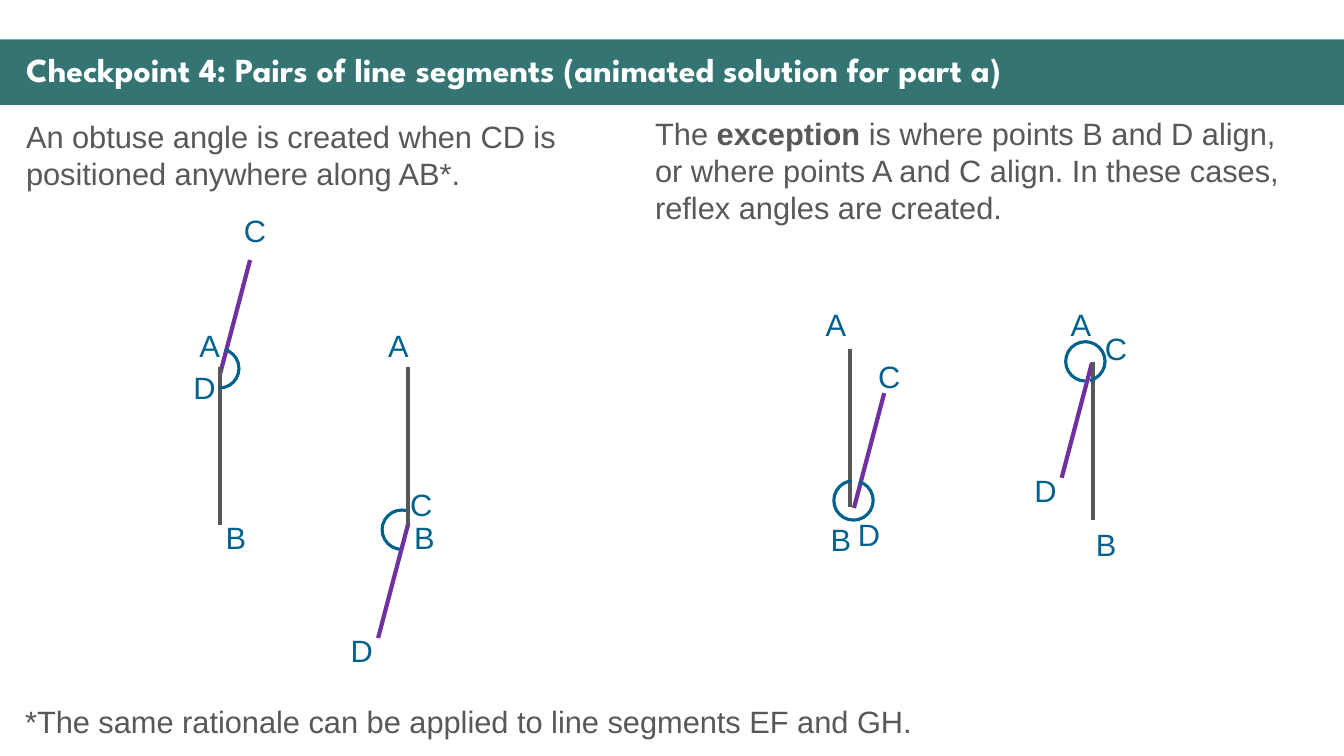
from pptx import Presentation
from pptx import util as u
from pptx.dml import color
from pptx.enum import shapes, text
from pptx.oxml import ns
from lxml import etree

TEAL, BLUE, PURPLE, GREY, WHITE = "347574", "00628C", "7030A0", "585858", "FFFFFF"
LABEL_SIZE = 0.42, 0.47
AB_LENGTH = 1.57
CD_ACROSS, CD_DOWN = -0.3, 1.14
ARC_SIZE = 0.39
ARC_UNITS_PER_DEGREE = 0.6

deck = Presentation()
deck.slide_width, deck.slide_height = u.Inches(13.33), u.Inches(7.5)
page = deck.slides.add_slide(deck.slide_layouts[5])


def write(content, left, top, width, height, box=None, size=22, font="Arial",
          ink=GREY, bold=False, wrap=True, before=4.4, spacing=1.0,
          anchor=text.MSO_ANCHOR.TOP):
    """Fill a box with text; every second piece of a list is bold."""
    lengths = [u.Inches(value) for value in (left, top, width, height)]
    box = box or page.shapes.add_textbox(*lengths)
    box.left, box.top, box.width, box.height = lengths
    frame = box.text_frame
    frame.word_wrap = wrap
    frame.auto_size = text.MSO_AUTO_SIZE.NONE
    frame.vertical_anchor = anchor
    para = frame.paragraphs[0]
    para.alignment = text.PP_ALIGN.LEFT
    para.space_before, para.line_spacing = u.Pt(before), spacing
    pieces = [content] if isinstance(content, str) else content
    for index, piece in enumerate(pieces):
        span = para.add_run()
        span.text = piece
        span.font.size, span.font.name = u.Pt(size), font
        span.font.bold = bold or index % 2 == 1
        span.font.color.rgb = color.RGBColor.from_string(ink)


def draw_segment(start, across, down, ink):
    """Draw a straight line segment from its upper end."""
    x, y = start
    segment = page.shapes.add_connector(
        shapes.MSO_CONNECTOR.STRAIGHT, u.Inches(x), u.Inches(y),
        u.Inches(x + across), u.Inches(y + down))
    segment.line.width = u.Pt(3)
    segment.line.color.rgb = color.RGBColor.from_string(ink)
    etree.SubElement(segment._element.spPr, ns.qn("a:effectLst"))


# Title on its band
band = page.shapes.add_shape(shapes.MSO_SHAPE.RECTANGLE, 0, u.Inches(0.39),
                             deck.slide_width, u.Inches(0.65))
band.shadow.inherit = False
band.fill.solid()
band.fill.fore_color.rgb = color.RGBColor.from_string(TEAL)
band.line.fill.background()
title = page.shapes.title
title._element.addprevious(band._element)
write("Checkpoint 4: Pairs of line segments (animated solution for part a)",
      0.16, 0.48, 13.04, 0.47, box=title, size=24, font="League Spartan",
      ink=WHITE, bold=True, before=10, spacing=0.9, anchor=text.MSO_ANCHOR.MIDDLE)

# Explanations
write("An obtuse angle is created when CD is positioned anywhere along AB*.",
      0.16, 1.12, 5.75, 0.84)
write(["The ", "exception ", "is where points B and D align, or where points "
       "A and C align. In these cases, reflex angles are created."],
      6.4, 1.09, 6.57, 1.21)
write("*The same rationale can be applied to line segments EF and GH.",
      0.15, 6.92, 9.65, 0.47)

# Each diagram: upper ends of AB and CD, arc corner, arc degrees, label corners
diagrams = [
    ((2.18, 3.64), (2.48, 2.58), (1.98, 3.46), (287, 91),
     {"A": (1.88, 3.19), "B": (2.14, 5.1), "C": (2.32, 2.05), "D": (1.82, 3.61)}),
    ((4.05, 3.64), (4.05, 5.19), (3.79, 5.06), (94.5, 282.6),
     {"A": (3.75, 3.19), "B": (4.01, 5.1), "C": (3.97, 4.77), "D": (3.38, 6.22)}),
    ((8.43, 3.46), (8.77, 3.9), (8.27, 4.77), (287, 264.7),
     {"A": (8.09, 2.98), "B": (8.14, 5.12), "C": (8.61, 3.5), "D": (8.41, 5.07)}),
    ((10.84, 3.59), (10.83, 3.6), (10.57, 3.39), (91.8, 76.9),
     {"A": (10.52, 2.98), "B": (10.77, 5.17), "C": (10.86, 3.22), "D": (10.16, 4.63)}),
]
for ab_top, cd_top, arc_corner, degrees, labels in diagrams:
    draw_segment(cd_top, CD_ACROSS, CD_DOWN, PURPLE)
    draw_segment(ab_top, 0, AB_LENGTH, GREY)

    # Angle mark
    arc = page.shapes.add_shape(
        shapes.MSO_SHAPE.ARC, *[u.Inches(value) for value in arc_corner],
        u.Inches(ARC_SIZE), u.Inches(ARC_SIZE))
    arc.shadow.inherit = False
    arc.fill.background()
    arc.line.width = u.Pt(2.25)
    arc.line.color.rgb = color.RGBColor.from_string(BLUE)
    for index, angle in enumerate(degrees):
        arc.adjustments[index] = angle * ARC_UNITS_PER_DEGREE

    # Point names
    for name, corner in labels.items():
        write(name, *corner, *LABEL_SIZE, ink=BLUE, wrap=False)

deck.save("out.pptx")
